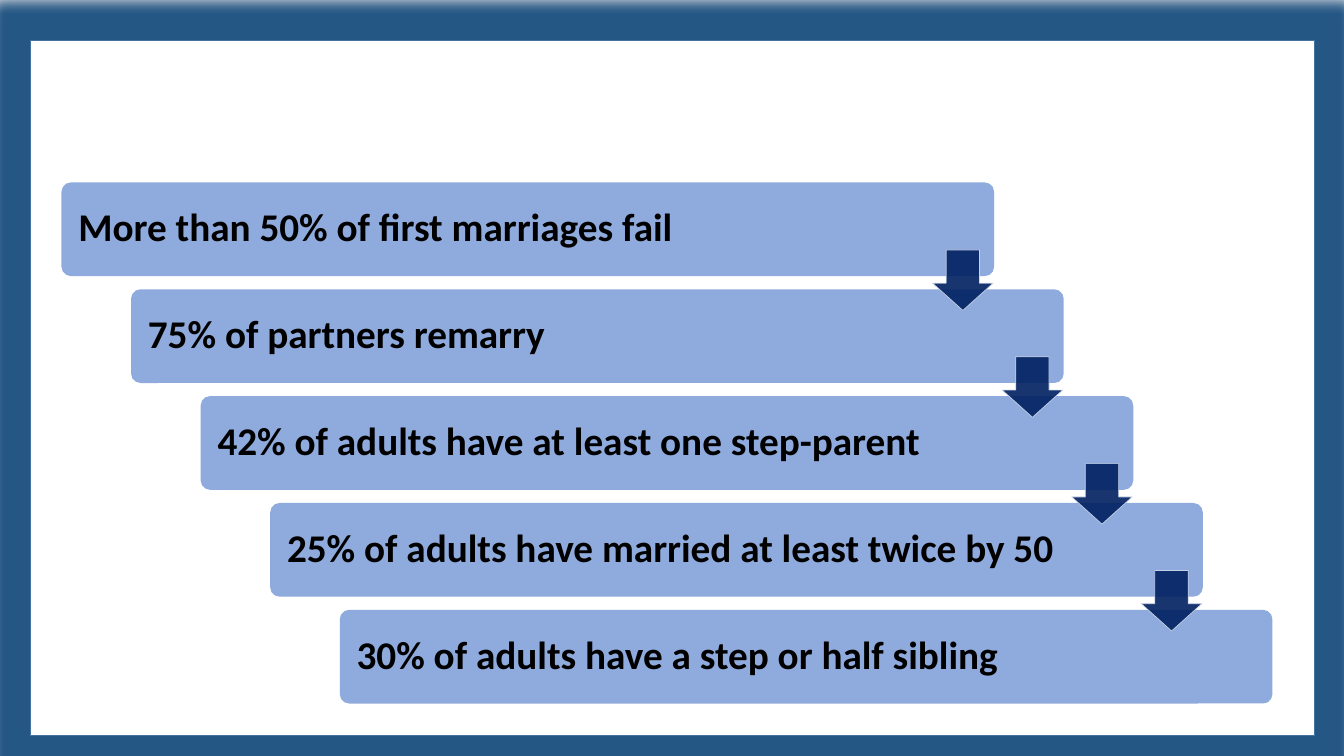
from lxml import etree
from pptx import Presentation
from pptx.dml.color import RGBColor
from pptx.enum.shapes import MSO_SHAPE as Shape
from pptx.enum.text import MSO_ANCHOR as Anchor, PP_ALIGN as Align
from pptx.oxml.ns import qn
from pptx.util import Inches, Pt

FACTS = [
    "More than 50% of first marriages fail",
    "75% of partners remarry",
    "42% of adults have at least one step-parent",
    "25% of adults have married at least twice by 50",
    "30% of adults have a step or half sibling",
]

# Staircase geometry, in inches
STEP_X, STEP_Y = 0.69, 1.06
BAR_LEFT, BAR_TOP, BAR_WIDTH, BAR_HEIGHT = 0.61, 1.81, 9.25, 0.93
ARROW_LEFT, ARROW_TOP, ARROW_SIZE = 9.25, 2.48, 0.6


def color(value):
    return RGBColor.from_string(value)


def add_block(page, kind, left, top, width, height, fill, line=None, weight=1):
    block = page.shapes.add_shape(
        kind, Inches(left), Inches(top), Inches(width), Inches(height))
    block.shadow.inherit = False
    block.fill.solid()
    block.fill.fore_color.rgb = color(fill)
    if line:
        block.line.color.rgb = color(line)
        block.line.width = Pt(weight)
    else:
        block.line.fill.background()
    return block


def add_glow(block, value, radius):
    effects = block._element.spPr.find(qn("a:effectLst"))
    glow = etree.SubElement(effects, qn("a:glow"), rad=str(radius))
    etree.SubElement(glow, qn("a:srgbClr"), val=value)


def set_opacity(block, percent):
    for tint in block._element.spPr.iter(qn("a:srgbClr")):
        etree.SubElement(tint, qn("a:alpha"), val=str(percent * 1000))


def add_bar(page, step, fact):
    bar = add_block(page, Shape.ROUNDED_RECTANGLE,
                    BAR_LEFT + step * STEP_X, BAR_TOP + step * STEP_Y,
                    BAR_WIDTH, BAR_HEIGHT, "8FAADC")
    bar.adjustments[0] = 0.1
    frame = bar.text_frame
    frame.word_wrap = True
    frame.vertical_anchor = Anchor.MIDDLE
    frame.margin_left = frame.margin_right = Inches(0.14)
    para = frame.paragraphs[0]
    para.text = fact
    para.alignment = Align.LEFT
    para.line_spacing = 0.9
    para.font.name = "Calibri"
    para.font.size = Pt(28)
    para.font.bold = True
    para.font.color.rgb = color("000000")


def add_arrow(page, step):
    arrow = add_block(page, Shape.DOWN_ARROW,
                      ARROW_LEFT + step * STEP_X, ARROW_TOP + step * STEP_Y,
                      ARROW_SIZE, ARROW_SIZE, "002060", "D2DEEF", 0.5)
    arrow.adjustments[0] = 0.45
    arrow.adjustments[1] = 0.55
    arrow.adjustments[0], arrow.adjustments[1] = 0.55, 0.45
    set_opacity(arrow, 90)


def main():
    deck = Presentation()
    deck.slide_width, deck.slide_height = Inches(13.33), Inches(7.5)
    page = deck.slides.add_slide(deck.slide_layouts[6])

    # Background and glowing panel
    page.background.fill.solid()
    page.background.fill.fore_color.rgb = color("E7E6E6")
    panel = add_block(page, Shape.RECTANGLE, 0.3, 0.4, 12.74, 6.9,
                      "FFFFFF", "43739E")
    add_glow(panel, "255785", Pt(18))

    # Bars, then the arrows that overlap them
    for step, fact in enumerate(FACTS):
        add_bar(page, step, fact)
    for step in range(len(FACTS) - 1):
        add_arrow(page, step)

    deck.save("out.pptx")


if __name__ == "__main__":
    main()
